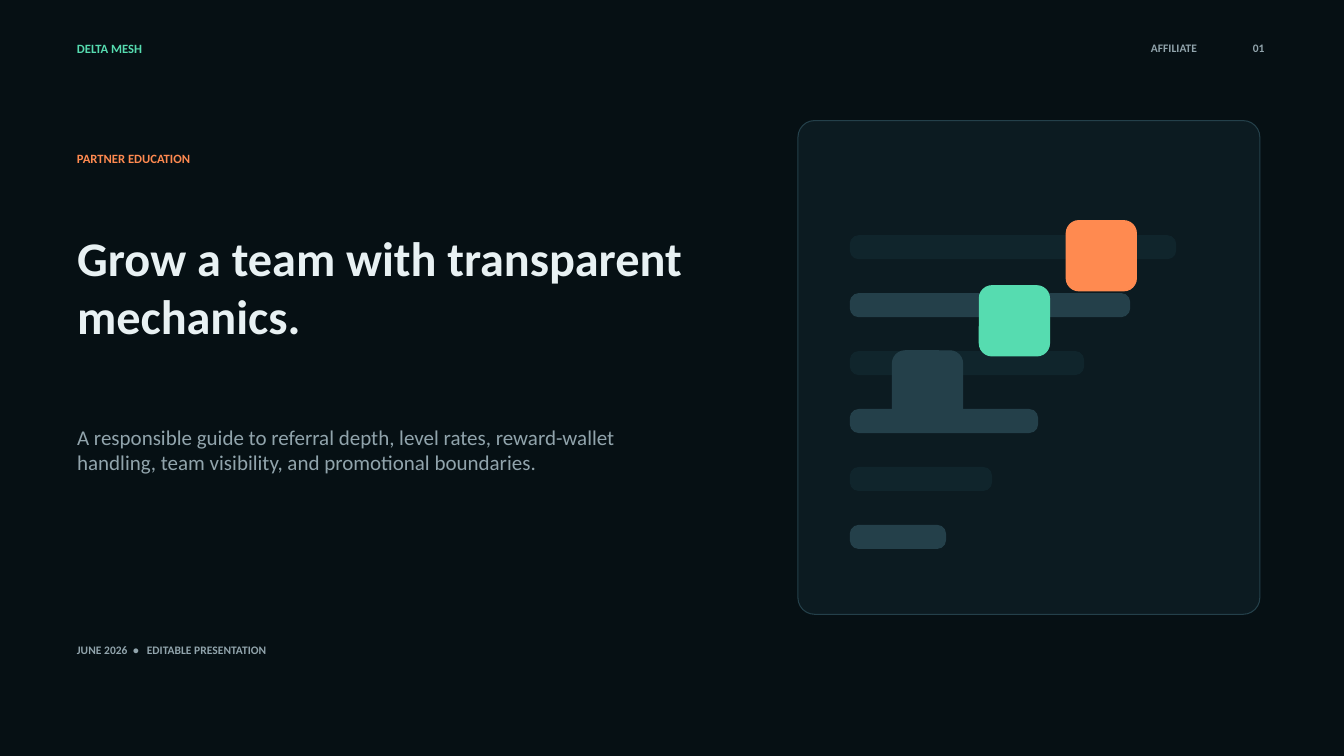
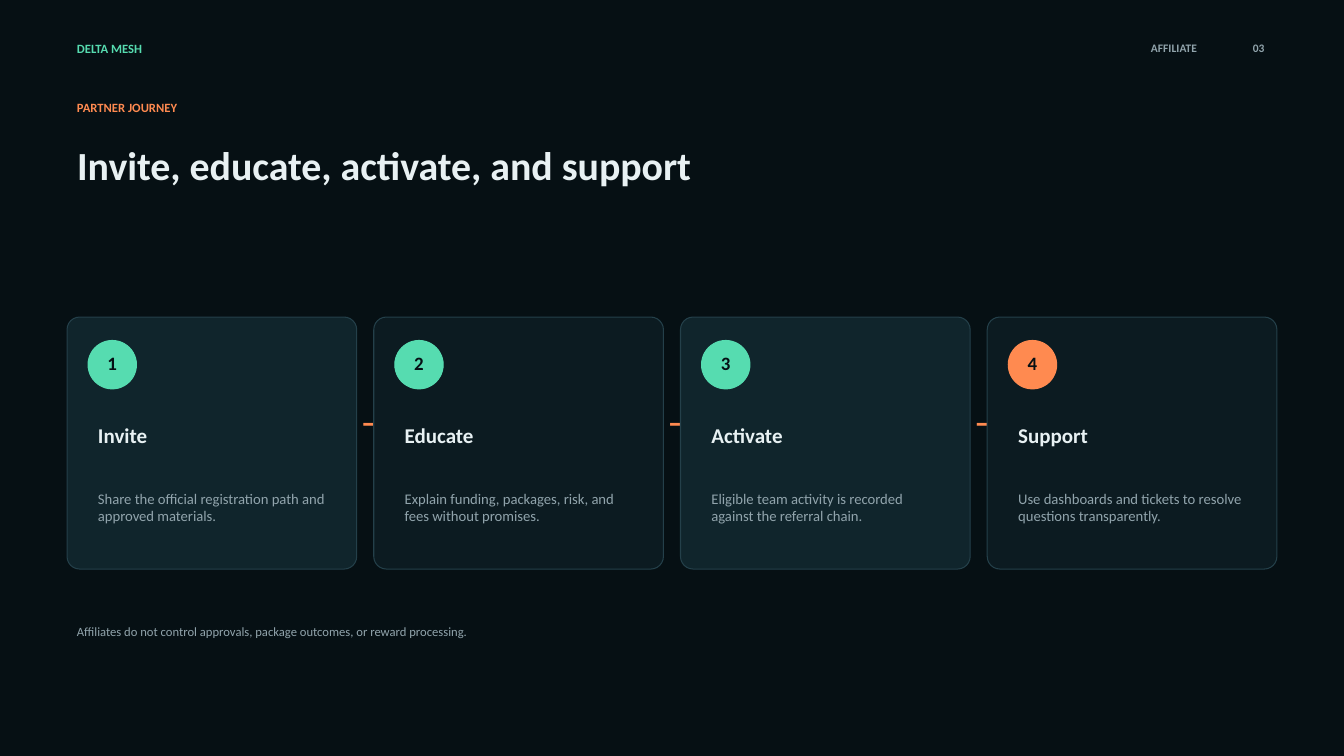
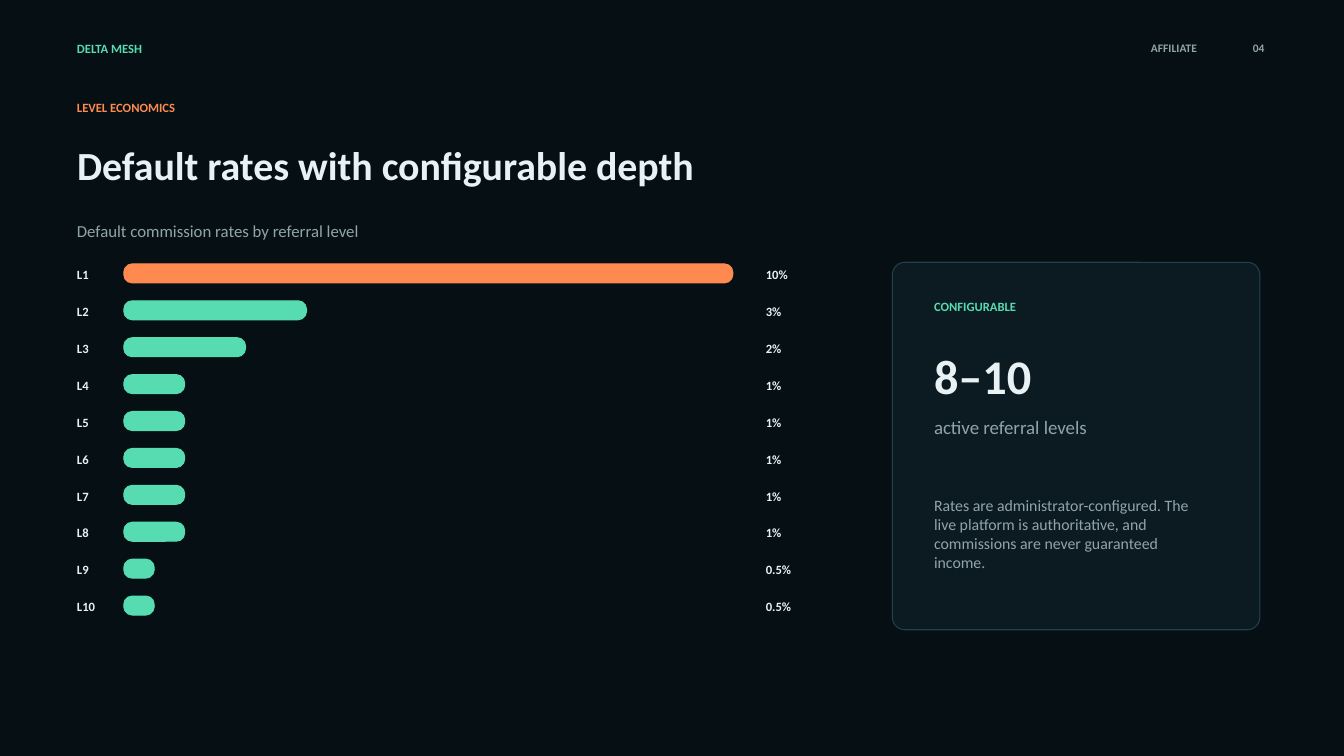
from pptx import Presentation
from pptx.dml.color import RGBColor
from pptx.enum.shapes import MSO_SHAPE
from pptx.enum.text import MSO_ANCHOR, MSO_AUTO_SIZE, PP_ALIGN
from pptx.util import Cm, Pt

ROUNDED = MSO_SHAPE.ROUNDED_RECTANGLE
MIDDLE = MSO_ANCHOR.MIDDLE
NO_FIT = MSO_AUTO_SIZE.NONE
LEFT, CENTER, RIGHT = PP_ALIGN.LEFT, PP_ALIGN.CENTER, PP_ALIGN.RIGHT

# Shared look
FONT = "Calibri"
NIGHT, PANEL, TEAL, EDGE = "061014", "0C1B21", "10252C", "24404A"
MINT, ORANGE, WHITE, GREY = "56DCB0", "FF8A50", "E8F1F3", "91A4AC"
MARGIN = 1.69
SEPARATOR = " • "
TITLE_LAYOUT, TITLE_ONLY_LAYOUT = 0, 5


def colour(hex_string):
    return RGBColor.from_string(hex_string)


# Text
def write(box, text, size, ink, bold=False, align=LEFT):
    frame = box.text_frame
    frame.word_wrap = True
    frame.auto_size = NO_FIT
    frame.vertical_anchor = MIDDLE
    para = frame.paragraphs[0]
    para.alignment = align
    para.space_before = Pt(0)
    for part in filter(None, text.partition(SEPARATOR)):
        span = para.add_run()
        span.text = part
        span.font.name = FONT
        span.font.size = Pt(size)
        span.font.bold = bold
        span.font.color.rgb = colour(ink)
        if part == SEPARATOR:
            # Letter spacing, in hundredths of a point
            span.font._element.set("spc", "190")


def add_text(page, left, top, width, height, text, size, ink, bold=False, align=LEFT):
    box = page.shapes.add_textbox(Cm(left), Cm(top), Cm(width), Cm(height))
    write(box, text, size, ink, bold, align)


def fill_placeholder(box, left, top, width, height, text, size, ink, bold=False):
    box.left, box.top = Cm(left), Cm(top)
    box.width, box.height = Cm(width), Cm(height)
    write(box, text, size, ink, bold)


# Shapes
def add_block(page, left, top, width, height, rounding, fill, line=None):
    block = page.shapes.add_shape(ROUNDED, Cm(left), Cm(top), Cm(width), Cm(height))
    block.adjustments[0] = rounding
    block.shadow.inherit = False
    block.fill.solid()
    block.fill.fore_color.rgb = colour(fill)
    block.line.color.rgb = colour(line or fill)
    block.line.width = Pt(0.75)
    return block


def add_badge(page, left, top, label, fill):
    badge = add_block(page, left, top, 1.22, 1.22, 0.5, fill)
    write(badge, label, 13.5, NIGHT, True, CENTER)
    frame = badge.text_frame
    frame.margin_left = frame.margin_right = frame.margin_top = Cm(0)
    frame.margin_bottom = Cm(0.1)


# Pages
def add_page(deck, layout, number):
    page = deck.slides.add_slide(deck.slide_layouts[layout])
    add_text(page, MARGIN, 0.89, 6.1, 0.64, "DELTA MESH", 9, MINT, True)
    add_text(page, 23.28, 0.89, 7.14, 0.64, "AFFILIATE", 8.25, GREY, True, RIGHT)
    add_text(page, 30.7, 0.89, 1.42, 0.64, number, 8.25, GREY, True, RIGHT)
    return page


def add_content_page(deck, number, eyebrow, title):
    page = add_page(deck, TITLE_ONLY_LAYOUT, number)
    add_text(page, MARGIN, 2.38, 9.26, 0.64, eyebrow, 9, ORANGE, True)
    fill_placeholder(page.shapes.title, MARGIN, 3.23, 29.1, 1.85, title, 28.5, WHITE, True)
    return page


def build_cover(deck):
    page = add_page(deck, TITLE_LAYOUT, "01")

    # Illustration: shrinking bars and climbing tiles
    add_block(page, 20.11, 3.04, 11.64, 12.44, 0.036, PANEL, EDGE)
    for index in range(6):
        fill = EDGE if index % 2 else TEAL
        add_block(page, 21.43, 5.94 + 1.46 * index, 8.2 - 1.16 * index, 0.58, 0.364, fill)
    for index, fill in enumerate((EDGE, MINT, ORANGE)):
        add_block(page, 22.49 + 2.19 * index, 8.84 - 1.64 * index, 1.77, 1.77, 0.18, fill)

    # Headline
    add_text(page, MARGIN, 3.65, 15.34, 0.69, "PARTNER EDUCATION", 9, ORANGE, True)
    fill_placeholder(page.shapes.title, MARGIN, 4.9, 16.4, 4.63,
                     "Grow a team with transparent mechanics.", 34.5, WHITE, True)
    fill_placeholder(page.placeholders[1], MARGIN, 10, 15.61, 2.65,
                     "A responsible guide to referral depth, level rates, reward-wallet "
                     "handling, team visibility, and promotional boundaries.", 15, GREY)
    add_text(page, MARGIN, 16.01, 14.82, 0.74,
             "JUNE 2026 • EDITABLE PRESENTATION", 8.25, GREY, True)


def build_journey(deck):
    page = add_content_page(deck, "03", "PARTNER JOURNEY",
                            "Invite, educate, activate, and support")
    steps = (
        ("Invite", "Share the official registration path and approved materials."),
        ("Educate", "Explain funding, packages, risk, and fees without promises."),
        ("Activate", "Eligible team activity is recorded against the referral chain."),
        ("Support", "Use dashboards and tickets to resolve questions transparently."),
    )
    for index, (name, detail) in enumerate(steps):
        left = MARGIN + 7.73 * index
        inner = left + 0.53
        last = index == len(steps) - 1
        add_block(page, left, 7.99, 7.3, 6.35, 0.05, PANEL if index % 2 else TEAL, EDGE)
        add_badge(page, inner, 8.58, str(index + 1), ORANGE if last else MINT)
        add_text(page, inner, 10.33, 6.25, 1.27, name, 15, WHITE, True)
        add_text(page, inner, 11.8, 6.25, 1.96, detail, 10.5, GREY)
        if not last:
            add_text(page, left + 7.2, 10.11, 0.64, 1.07, "→", 18, ORANGE, True, CENTER)
    add_text(page, MARGIN, 15.36, 29.64, 1.12,
             "Affiliates do not control approvals, package outcomes, or reward processing.",
             9, GREY)


def build_rates(deck):
    page = add_content_page(deck, "04", "LEVEL ECONOMICS",
                            "Default rates with configurable depth")
    add_text(page, MARGIN, 5.42, 13.77, 0.79,
             "Default commission rates by referral level", 12, GREY)

    # Rows of level, rounded bar in proportion to the rate, and rate
    rates = (10, 3, 2, 1, 1, 1, 1, 1, 0.5, 0.5)
    full_width = 15.35
    for index, rate in enumerate(rates):
        top = 6.6 + 0.93 * index
        fill = MINT if index else ORANGE
        add_text(page, MARGIN, top, 1.32, 0.64, f"L{index + 1}", 9, WHITE, True)
        add_block(page, 3.12, top + 0.05, full_width * rate / max(rates), 0.48, 0.444, fill)
        add_text(page, 19.05, top, 1.85, 0.64, f"{rate}%", 9, WHITE, True)

    # Key figure
    add_block(page, 22.49, 6.61, 9.26, 9.26, 0.034, PANEL, EDGE)
    add_text(page, 23.29, 7.41, 7.67, 0.64, "CONFIGURABLE", 9, MINT, True)
    add_text(page, 23.29, 8.52, 7.67, 1.85, "8–10", 34.5, WHITE, True)
    add_text(page, 23.29, 10.31, 7.67, 0.9, "active referral levels", 13.5, GREY)
    add_text(page, 23.29, 12.12, 7.14, 2.65,
             "Rates are administrator-configured. The live platform is authoritative, "
             "and commissions are never guaranteed income.", 11.25, GREY)


def main():
    deck = Presentation()
    deck.slide_width, deck.slide_height = Cm(33.87), Cm(19.05)
    backdrop = deck.slide_master.background.fill
    backdrop.solid()
    backdrop.fore_color.rgb = colour(NIGHT)
    build_cover(deck)
    build_journey(deck)
    build_rates(deck)
    deck.save("out.pptx")


if __name__ == "__main__":
    main()
